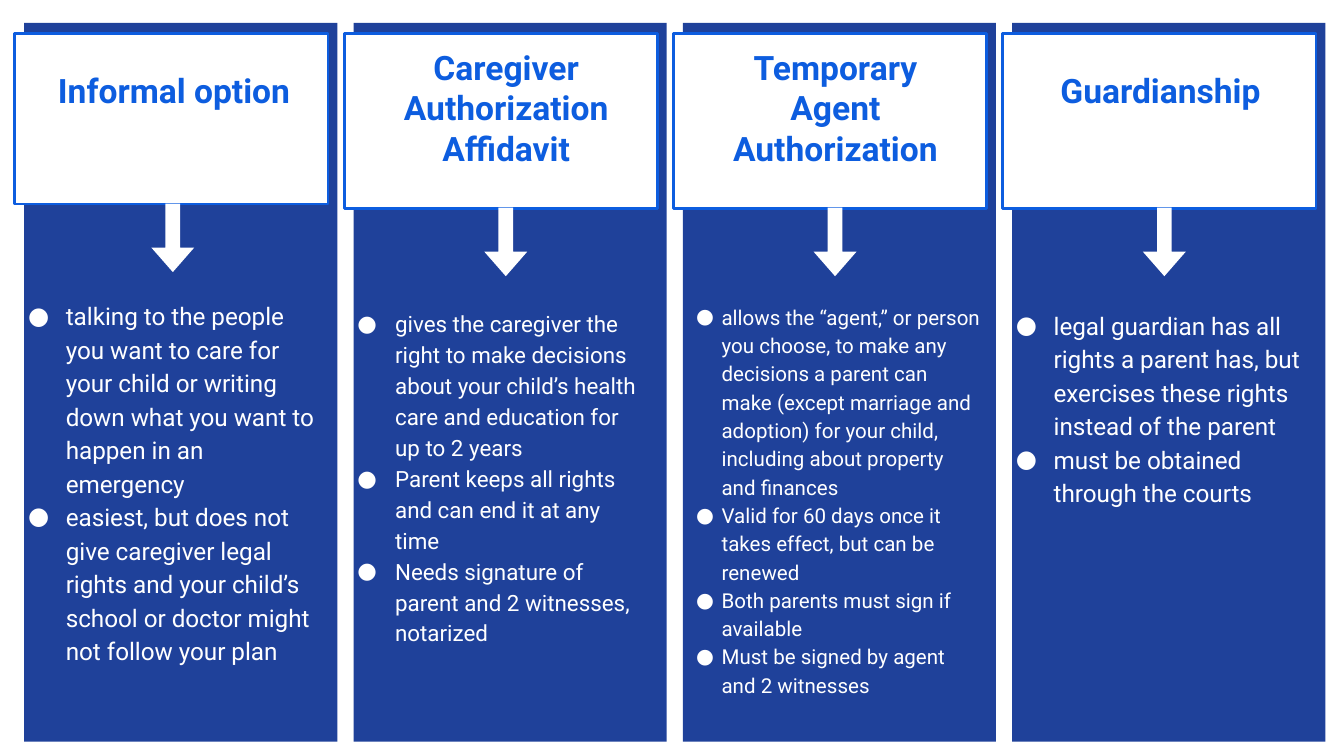
"""Build a slide comparing four caregiving arrangements in columns."""
from dataclasses import dataclass
from typing import Any

from lxml.etree import SubElement
from pptx import Presentation
from pptx.dml.color import RGBColor
from pptx.enum.shapes import MSO_SHAPE
from pptx.enum.text import PP_ALIGN
from pptx.oxml.ns import qn
from pptx.shapes.autoshape import Shape
from pptx.shapes.group import GroupShape
from pptx.text.text import _Paragraph
from pptx.util import Pt

NAVY, BLUE, WHITE = "1F419A", "0D5DDF", "FFFFFF"
FIRST_LEFT, PITCH, WIDTH = 13, 176.4, 167.8
PANEL_TOP, PANEL_HEIGHT = 12.2, 385.2
CARD_TOP, CARD_SHIFT = 18, -5
HEADING_WIDTH, HEADING_HEIGHT = 150.5, 64
ARROW_LENGTH, ARROW_BREADTH, ARROW_GAP = 36.7, 23, 6.5
BODY_BOTTOM = 388.5
FRAME = {"word_wrap": True, "margin_left": Pt(7.2), "margin_right": Pt(7.2),
         "margin_top": Pt(7.2), "margin_bottom": Pt(7.2)}
HEADING_FONT = {"name": "Roboto", "size": Pt(18), "bold": True}


@dataclass(frozen=True)
class Option:
    heading: str
    points: tuple[str, ...]
    size: float
    body_top: float
    heading_top: float = 18
    heading_shift: float = 6.5
    card_height: float = 93.6
    arrow_shift: float = 63.2
    body_shift: float = -5
    indent: float = 20.2


OPTIONS = (
    Option("Informal option", (
        "talking to the people you want to care for your child or writing down "
        "what you want to happen in an emergency",
        "easiest, but does not give caregiver legal rights and your child’s "
        "school or doctor might not follow your plan",
    ), 13, 151.9, heading_top=30.2, heading_shift=5, card_height=91.4, arrow_shift=61.2),
    Option("Caregiver Authorization Affidavit", (
        "gives the caregiver the right to make decisions about your child’s "
        "health care and education for up to 2 years",
        "Parent keeps all rights and can end it at any time",
        "Needs signature of parent and 2 witnesses, notarized",
    ), 12, 157),
    Option("Temporary Agent Authorization", (
        "allows the “agent,” or person you choose, to make any decisions a "
        "parent can make (except marriage and adoption) for your child, "
        "including about property and finances",
        "Valid for 60 days once it takes effect, but can be renewed",
        "Both parents must sign if available",
        "Must be signed by agent and 2 witnesses",
    ), 11, 154.1, body_shift=0, indent=13.7),
    Option("Guardianship", (
        "legal guardian has all rights a parent has, but exercises these rights "
        "instead of the parent",
        "must be obtained through the courts",
    ), 13, 157, heading_top=30.2, heading_shift=4.3),
)


def color(value: str) -> RGBColor:
    return RGBColor.from_string(value)


def apply(target: Any, values: dict[str, Any]) -> None:
    for name, value in values.items():
        setattr(target, name, value)


def add_block(group: GroupShape, kind: MSO_SHAPE, left: float, top: float,
              width: float, height: float, fill: str) -> Shape:
    block = group.shapes.add_shape(kind, Pt(left), Pt(top), Pt(width), Pt(height))
    block.shadow.inherit = False
    block.fill.solid()
    block.fill.fore_color.rgb = color(fill)
    block.line.fill.background()
    return block


def add_card(group: GroupShape, left: float, height: float) -> None:
    card = add_block(group, MSO_SHAPE.RECTANGLE, left, CARD_TOP, WIDTH, height, WHITE)
    card.line.color.rgb = color(BLUE)
    card.line.width = Pt(1.5)
    SubElement(card.element.spPr.find(qn("a:ln")), qn("a:round"))


def add_arrow(group: GroupShape, left: float, top: float) -> None:
    arrow = add_block(group, MSO_SHAPE.RIGHT_ARROW, left, top,
                      ARROW_LENGTH, ARROW_BREADTH, WHITE)
    arrow.rotation = 90
    arrow.adjustments[0] = 0.342
    arrow.adjustments[1] = 0.57


def add_bullet(paragraph: _Paragraph, indent: float) -> None:
    paragraph.line_spacing = 1.15
    properties = paragraph._p.get_or_add_pPr()
    properties.set("marL", str(Pt(indent)))
    properties.set("indent", str(-Pt(indent)))
    bullet_color = SubElement(properties, qn("a:buClr"))
    SubElement(bullet_color, qn("a:srgbClr"), val=WHITE)
    SubElement(properties, qn("a:buFont"), typeface="Roboto")
    SubElement(properties, qn("a:buChar"), char="●")


def add_text(group: GroupShape, left: float, top: float, width: float, height: float,
             lines: tuple[str, ...], font: dict[str, Any], ink: str,
             indent: float = 0) -> None:
    frame = group.shapes.add_textbox(Pt(left), Pt(top), Pt(width), Pt(height)).text_frame
    apply(frame, FRAME)
    for number, line in enumerate(lines):
        paragraph = frame.add_paragraph() if number else frame.paragraphs[0]
        if indent:
            add_bullet(paragraph, indent)
        else:
            paragraph.alignment = PP_ALIGN.CENTER
        run = paragraph.add_run()
        run.text = line
        apply(run.font, font)
        run.font.color.rgb = color(ink)


def add_option(group: GroupShape, option: Option, left: float) -> None:
    add_block(group, MSO_SHAPE.RECTANGLE, left, PANEL_TOP, WIDTH, PANEL_HEIGHT, NAVY)
    add_card(group, left + CARD_SHIFT, option.card_height)
    add_text(group, left + option.heading_shift, option.heading_top,
             HEADING_WIDTH, HEADING_HEIGHT, (option.heading,), HEADING_FONT, BLUE)
    add_arrow(group, left + option.arrow_shift, CARD_TOP + option.card_height + ARROW_GAP)
    add_text(group, left + option.body_shift, option.body_top, WIDTH,
             BODY_BOTTOM - option.body_top, option.points,
             {"name": "Roboto", "size": Pt(option.size)}, WHITE, option.indent)


def main() -> None:
    presentation = Presentation()
    apply(presentation, {"slide_width": Pt(720), "slide_height": Pt(405)})
    slide = presentation.slides.add_slide(presentation.slide_layouts[6])
    for column, option in enumerate(OPTIONS):
        add_option(slide.shapes.add_group_shape(), option, FIRST_LEFT + column * PITCH)
    presentation.save("out.pptx")


if __name__ == "__main__":
    main()
